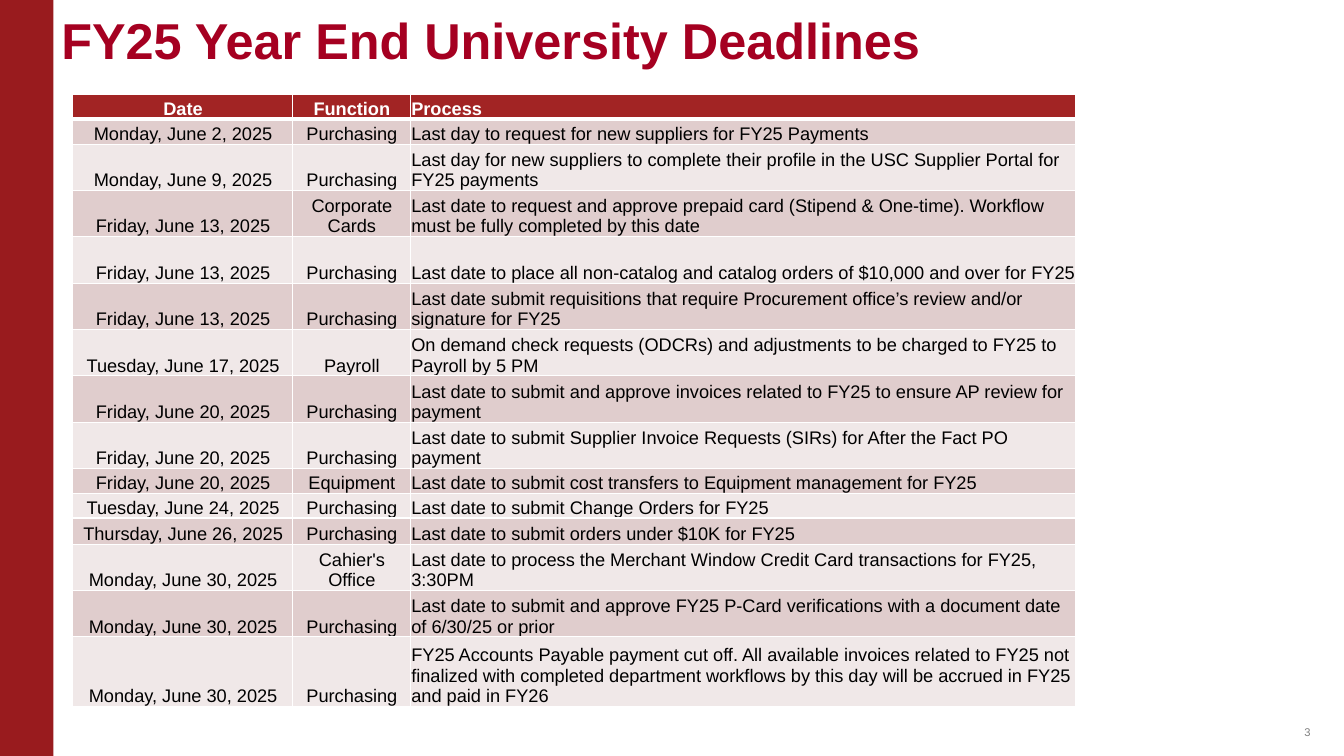
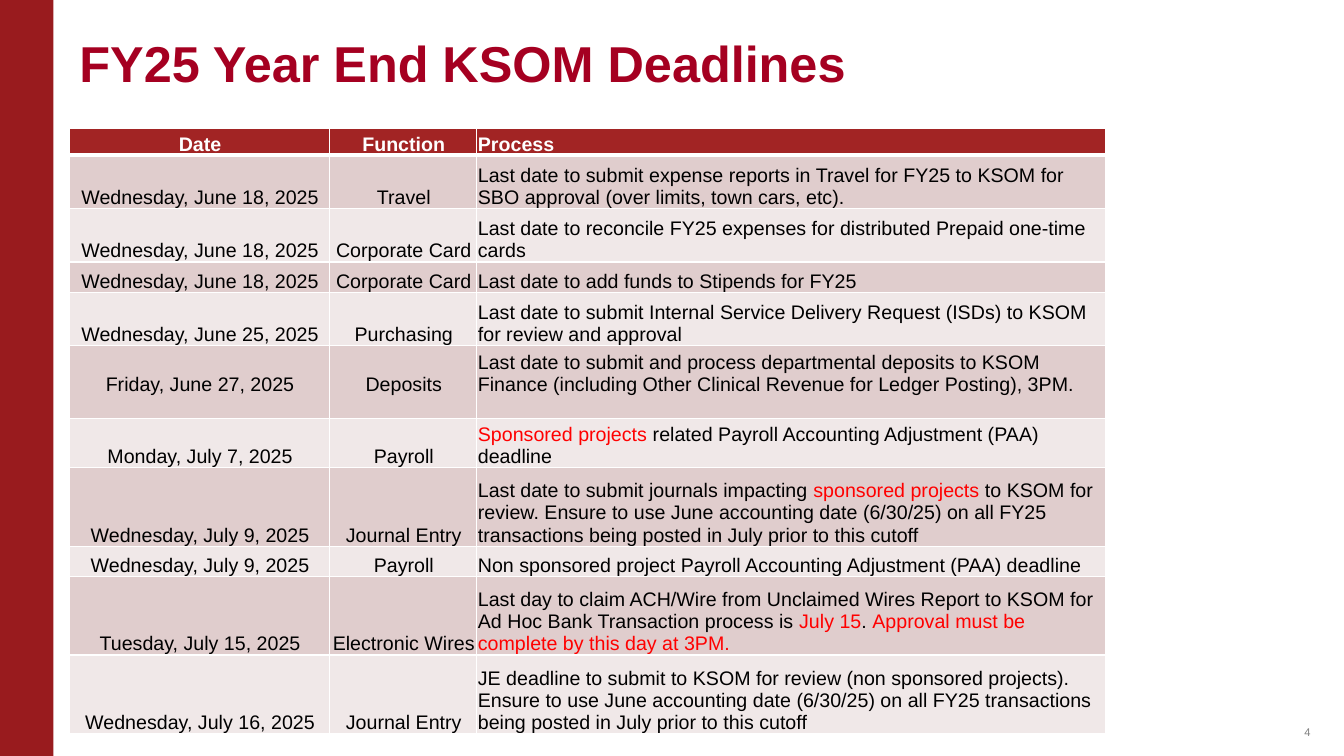
from lxml import etree
from pptx import Presentation
from pptx import util as u
from pptx.dml.color import RGBColor
from pptx.enum import shapes, text
from pptx.oxml import ns

Inches = u.Inches
WHITE = RGBColor(0xFF, 0xFF, 0xFF)
BLACK = RGBColor(0x00, 0x00, 0x00)
RED = RGBColor(0xFF, 0x00, 0x00)
GREY = RGBColor(0x80, 0x80, 0x80)
BAND_RED = RGBColor(0x99, 0x1B, 0x1E)
TITLE_RED = RGBColor(0xA5, 0x00, 0x21)
HEADER_RED = RGBColor(0xA2, 0x24, 0x24)
STRIPES = (RGBColor(0xF0, 0xE8, 0xE8), RGBColor(0xE0, 0xCD, 0xCD))

FONT = "Arial"
HEADINGS = ("Date", "Function", "Process")
CENTER, LEFT, RIGHT = text.PP_ALIGN.CENTER, text.PP_ALIGN.LEFT, text.PP_ALIGN.RIGHT
ALIGNMENTS = (CENTER, CENTER, LEFT)
CELL_FORMAT = {
    "margin_left": Inches(0.01),
    "margin_right": 0,
    "margin_top": Inches(0.01),
    "margin_bottom": 0,
    "vertical_anchor": text.MSO_ANCHOR.BOTTOM,
}
PAGE_NUMBER_FORMAT = {
    "margin_left": 0,
    "margin_right": 0,
    "margin_top": 0,
    "margin_bottom": 0,
    "vertical_anchor": text.MSO_ANCHOR.MIDDLE,
}

UNIVERSITY_ROWS = [
    (0.25, "Monday, June 2, 2025", "Purchasing",
     "Last day to request for new suppliers for FY25 Payments"),
    (0.46, "Monday, June 9, 2025", "Purchasing",
     "Last day for new suppliers to complete their profile in the USC Supplier Portal "
     "for FY25 payments"),
    (0.46, "Friday, June 13, 2025", "Corporate Cards",
     "Last date to request and approve prepaid card (Stipend & One-time). Workflow "
     "must be fully completed by this date"),
    (0.46, "Friday, June 13, 2025", "Purchasing",
     "Last date to place all non-catalog and catalog orders of $10,000 and over for FY25"),
    (0.46, "Friday, June 13, 2025", "Purchasing",
     "Last date submit requisitions that require Procurement office’s review and/or "
     "signature for FY25"),
    (0.46, "Tuesday, June 17, 2025", "Payroll",
     "On demand check requests (ODCRs) and adjustments to be charged to FY25 to "
     "Payroll by 5 PM"),
    (0.46, "Friday, June 20, 2025", "Purchasing",
     "Last date to submit and approve invoices related to FY25 to ensure AP review "
     "for payment"),
    (0.46, "Friday, June 20, 2025", "Purchasing",
     "Last date to submit Supplier Invoice Requests (SIRs) for After the Fact PO payment"),
    (0.25, "Friday, June 20, 2025", "Equipment",
     "Last date to submit cost transfers to Equipment management for FY25"),
    (0.24, "Tuesday, June 24, 2025", "Purchasing",
     "Last date to submit Change Orders for FY25"),
    (0.26, "Thursday, June 26, 2025", "Purchasing",
     "Last date to submit orders under $10K for FY25"),
    (0.46, "Monday, June 30, 2025", "Cahier's Office",
     "Last date to process the Merchant Window Credit Card transactions for FY25, 3:30PM"),
    (0.46, "Monday, June 30, 2025", "Purchasing",
     "Last date to submit and approve FY25 P-Card verifications with a document date "
     "of 6/30/25 or prior"),
    (0.69, "Monday, June 30, 2025", "Purchasing",
     "FY25 Accounts Payable payment cut off. All available invoices related to FY25 not "
     "finalized with completed department workflows by this day will be accrued in FY25 "
     "and paid in FY26"),
]

KSOM_ROWS = [
    (0.53, "Wednesday, June 18, 2025", "Travel",
     "Last date to submit expense reports in Travel for FY25 to KSOM for SBO approval "
     "(over limits, town cars, etc)."),
    (0.53, "Wednesday, June 18, 2025", "Corporate Card",
     "Last date to reconcile FY25 expenses for distributed Prepaid one-time cards"),
    (0.3, "Wednesday, June 18, 2025", "Corporate Card",
     "Last date to add funds to Stipends for FY25"),
    (0.53, "Wednesday, June 25, 2025", "Purchasing",
     "Last date to submit Internal Service Delivery Request (ISDs) to KSOM for review "
     "and approval"),
    (0.72, "Friday, June 27, 2025", "Deposits",
     "Last date to submit and process departmental deposits to KSOM Finance (including "
     "Other Clinical Revenue for Ledger Posting), 3PM."),
    (0.49, "Monday, July 7, 2025", "Payroll",
     "*Sponsored projects* related Payroll Accounting Adjustment (PAA) deadline"),
    (0.78, "Wednesday, July 9, 2025", "Journal Entry",
     "Last date to submit journals impacting *sponsored projects* to KSOM for review. "
     "Ensure to use June accounting date (6/30/25) on all FY25 transactions being posted "
     "in July prior to this cutoff"),
    (0.3, "Wednesday, July 9, 2025", "Payroll",
     "Non sponsored project Payroll Accounting Adjustment (PAA) deadline"),
    (0.78, "Tuesday, July 15, 2025", "Electronic Wires",
     "Last day to claim ACH/Wire from Unclaimed Wires Report to KSOM for Ad Hoc Bank "
     "Transaction process is *July 15*. *Approval must be complete by this day at 3PM.*"),
    (0.78, "Wednesday, July 16, 2025", "Journal Entry",
     "JE deadline to submit to KSOM for review (non sponsored projects). Ensure to use "
     "June accounting date (6/30/25) on all FY25 transactions being posted in July prior "
     "to this cutoff"),
]
DEPOSITS_ROW = 5


def apply_format(target, values):
    for name, value in values.items():
        setattr(target, name, value)


def write(para, words, size, color, bold=False, align=LEFT):
    para.alignment = align
    for index, part in enumerate(words.split("*")):
        if part:
            span = para.add_run()
            span.text = part
            apply_format(span.font, {"name": FONT, "size": u.Pt(size), "bold": bold})
            span.font.color.rgb = RED if index % 2 else color


def add_text_box(page, left, top, width, height):
    box = page.shapes.add_textbox(*map(Inches, (left, top, width, height)))
    box.text_frame.word_wrap = True
    return box.text_frame


def add_page(deck, number, title, left, top):
    page = deck.slides.add_slide(deck.slide_layouts[6])
    band = page.shapes.add_shape(
        shapes.MSO_SHAPE.RECTANGLE, 0, 0, Inches(0.53), deck.slide_height)
    band.shadow.inherit = False
    band.fill.solid()
    band.fill.fore_color.rgb = BAND_RED
    band.line.fill.background()

    frame = add_text_box(page, 12.86, 7.2, 0.14, 0.13)
    apply_format(frame, PAGE_NUMBER_FORMAT)
    write(frame.paragraphs[0], str(number), 8, GREY, align=RIGHT)

    para = add_text_box(page, left, top, 11.5, 0.93).paragraphs[0]
    para.line_spacing = 0.9
    write(para, title, 36, TITLE_RED, bold=True)
    return page


def set_borders(cell, widths):
    properties = cell._tc.get_or_add_tcPr()
    for index, (side, width) in enumerate(widths.items()):
        line = etree.Element(ns.qn(f"a:ln{side}"), w=str(u.Pt(width)))
        fill = etree.SubElement(line, ns.qn("a:solidFill"))
        etree.SubElement(fill, ns.qn("a:srgbClr"), val=str(WHITE))
        properties.insert(index, line)


def fill_cell(cell, words, row, size, align):
    header = row == 0
    apply_format(cell, CELL_FORMAT)
    cell.fill.solid()
    cell.fill.fore_color.rgb = HEADER_RED if header else STRIPES[row % 2]
    write(cell.text_frame.paragraphs[0], words, size,
          WHITE if header else BLACK, header, align)
    set_borders(cell, {"L": 1, "R": 1, "T": 3 if row == 1 else 1, "B": 3 if header else 1})


def add_deadlines(page, left, top, widths, header_height, entries, size):
    rows = [(header_height, *HEADINGS), *entries]
    height = sum(row[0] for row in rows)
    table = page.shapes.add_table(
        len(rows), len(widths), Inches(left), Inches(top),
        Inches(sum(widths)), Inches(height)).table
    for column, width in zip(table.columns, widths):
        column.width = Inches(width)
    for index, (row_height, *texts) in enumerate(rows):
        table.rows[index].height = Inches(row_height)
        for column, (words, align) in enumerate(zip(texts, ALIGNMENTS)):
            fill_cell(table.cell(index, column), words, index, size, align)
    return table


def main():
    deck = Presentation()
    deck.slide_width, deck.slide_height = Inches(13.33), Inches(7.5)

    page = add_page(deck, 3, "FY25 Year End University Deadlines", 0.51, 0.11)
    add_deadlines(page, 0.72, 0.94, (2.18, 1.17, 6.6), 0.24, UNIVERSITY_ROWS, 13)

    page = add_page(deck, 4, "FY25 Year End KSOM Deadlines", 0.69, 0.34)
    table = add_deadlines(page, 0.69, 1.27, (2.58, 1.46, 6.24), 0.27, KSOM_ROWS, 14)
    for cell in table.rows[DEPOSITS_ROW].cells:
        cell.margin_bottom = Inches(0.22)

    deck.save("out.pptx")


if __name__ == "__main__":
    main()
